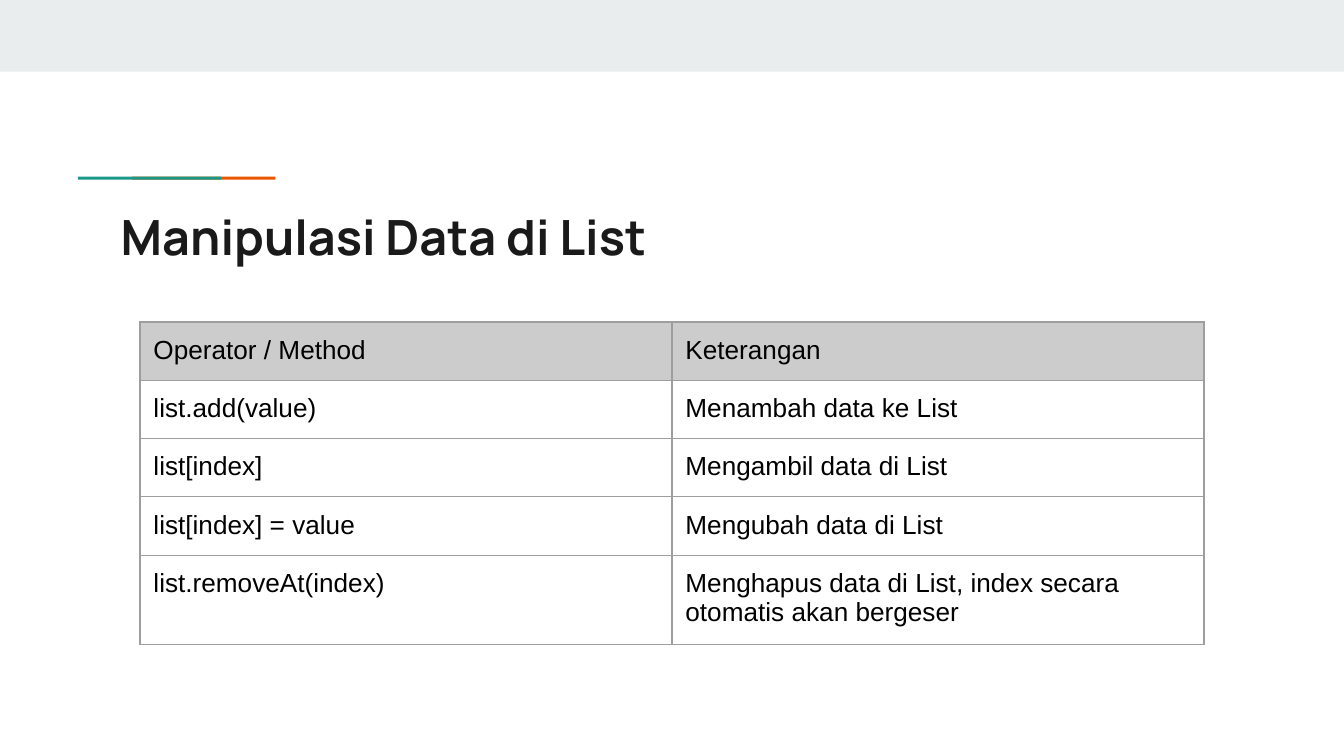
from lxml.etree import SubElement
from pptx import Presentation
from pptx.dml.color import RGBColor
from pptx.enum.shapes import MSO_SHAPE as Shape
from pptx.enum.text import MSO_ANCHOR as Anchor
from pptx.oxml.ns import qn
from pptx.util import Pt

COLORS = {
    "banner": "E9EDEE",
    "teal": "1A9988",
    "orange": "EB5600",
    "title": "1A1A1A",
    "text": "000000",
    "header": "CCCCCC",
    "border": "9E9E9E",
}
INSET = 7.2
OPERATIONS = [
    ("Operator / Method", "Keterangan"),
    ("list.add(value)", "Menambah data ke List"),
    ("list[index]", "Mengambil data di List"),
    ("list[index] = value", "Mengubah data di List"),
    ("list.removeAt(index)",
     "Menghapus data di List, index secara otomatis akan bergeser"),
]


def rgb(name):
    return RGBColor.from_string(COLORS[name])


def write(frame, text, font="Arial", size=14, color="text", bold=False):
    frame.word_wrap = True
    run = frame.paragraphs[0].add_run()
    run.text = text
    run.font.name = font
    run.font.size = Pt(size)
    run.font.bold = bold
    run.font.color.rgb = rgb(color)


def set_insets(holder):
    """Give a text frame or a cell the same margin on all sides."""
    holder.margin_left = holder.margin_right = Pt(INSET)
    holder.margin_top = holder.margin_bottom = Pt(INSET)


def add_bar(slide, left, top, width, height, color):
    bar = slide.shapes.add_shape(
        Shape.RECTANGLE, Pt(left), Pt(top), Pt(width), Pt(height))
    bar.shadow.inherit = False
    bar.fill.solid()
    bar.fill.fore_color.rgb = rgb(color)
    bar.line.fill.background()


def add_accent(slide, left, top, width, height):
    """Draw two equal bars above the title, the teal one over the orange."""
    shift = 29
    add_bar(slide, left + shift, top, width - shift, height, "orange")
    add_bar(slide, left, top, width - shift, height, "teal")


def add_title(slide, left, top, width, height):
    title = slide.shapes.add_textbox(Pt(left), Pt(top), Pt(width), Pt(height))
    frame = title.text_frame
    set_insets(frame)
    frame.vertical_anchor = Anchor.TOP
    write(frame, "Manipulasi Data di List",
          font="Manrope", size=26, color="title", bold=True)


def add_borders(cell):
    properties = cell._tc.get_or_add_tcPr()
    for index, side in enumerate(("a:lnL", "a:lnR", "a:lnT", "a:lnB")):
        line = SubElement(properties, qn(side), w=str(Pt(0.75)))
        fill = SubElement(line, qn("a:solidFill"))
        SubElement(fill, qn("a:srgbClr"), val=COLORS["border"])
        properties.insert(index, line)


def add_operations(slide, left, top, width, height):
    rows, columns = len(OPERATIONS), len(OPERATIONS[0])
    table = slide.shapes.add_table(
        rows, columns, Pt(left), Pt(top), Pt(width), Pt(height)).table
    table.first_row = table.horz_banding = False
    for r, operation in enumerate(OPERATIONS):
        for c, text in enumerate(operation):
            cell = table.cell(r, c)
            set_insets(cell)
            cell.vertical_anchor = Anchor.TOP
            if r == 0:
                cell.fill.solid()
                cell.fill.fore_color.rgb = rgb("header")
            else:
                cell.fill.background()
            add_borders(cell)
            write(cell.text_frame, text)


def main():
    deck = Presentation()
    deck.slide_width, deck.slide_height = Pt(720), Pt(405)
    slide = deck.slides.add_slide(deck.slide_layouts[6])
    add_bar(slide, 0, 0, 720, 38.4, "banner")
    add_accent(slide, 41.8, 94.7, 105.7, 1.6)
    add_title(slide, 57.6, 103.7, 605.5, 42.5)
    add_operations(slide, 75, 172.5, 570, 150)
    deck.save("out.pptx")


if __name__ == "__main__":
    main()
